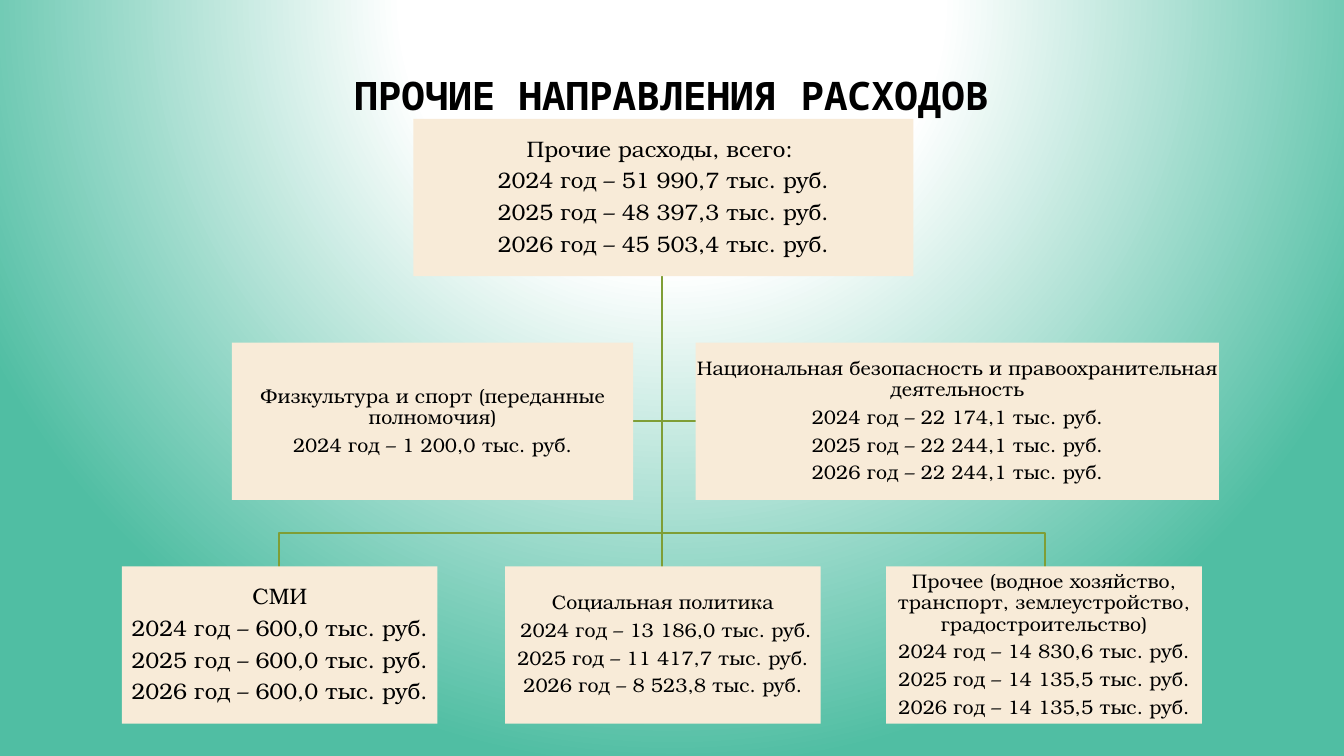
from lxml.etree import fromstring
from pptx import Presentation
from pptx.dml.color import RGBColor
from pptx.enum.shapes import MSO_SHAPE as Shape
from pptx.enum.text import MSO_ANCHOR as Anchor, PP_ALIGN as Align
from pptx.oxml.ns import nsdecls
from pptx.util import Inches, Pt

BLACK = RGBColor(0x00, 0x00, 0x00)
WHITE = RGBColor(0xFF, 0xFF, 0xFF)
TEAL = RGBColor(0x50, 0xBE, 0xA3)
CREAM = RGBColor(0xF8, 0xEB, 0xD8)
OLIVE = RGBColor(0x7F, 0x9E, 0x36)

TRUNK = 6.57
HIGH = 1.56
TOP, MID, LOW = 1.18, 3.4, 5.62
FORK = 5.29


def write(frame, lines, size=14, font="TeX Gyre Bonum", bold=False, inset=0.01, gap=0.33):
    """Fill a text frame with centred lines; gap is a share of the font size."""
    frame.word_wrap = True
    frame.vertical_anchor = Anchor.MIDDLE
    frame.margin_left = frame.margin_right = Inches(inset)
    frame.margin_top = frame.margin_bottom = Inches(inset)
    for i, line in enumerate(lines):
        para = frame.paragraphs[0] if i == 0 else frame.add_paragraph()
        para.alignment = Align.CENTER
        para.line_spacing = 0.9
        para.space_after = Pt(size * gap)
        run = para.add_run()
        run.text = line
        run.font.size = Pt(size)
        run.font.name = font
        run.font.bold = bold
        run.font.color.rgb = BLACK


class Chart:
    def __init__(self, slide):
        self.slide = slide
        self.shapes = slide.shapes

    def glow(self):
        """Set the round gradient that spreads from above the slide."""
        stops = "".join(
            f'<a:gs pos="{pos}"><a:srgbClr val="{color}"/></a:gs>'
            for pos, color in ((0, WHITE), (35000, WHITE), (100000, TEAL)))
        back = fromstring(
            f'<p:bg {nsdecls("p", "a")}><p:bgPr><a:gradFill rotWithShape="1">'
            f'<a:gsLst>{stops}</a:gsLst><a:path path="circle">'
            '<a:fillToRect l="50000" t="-80000" r="50000" b="180000"/></a:path>'
            '</a:gradFill><a:effectLst/></p:bgPr></p:bg>')
        self.slide.element.cSld.insert(0, back)

    def title(self, text):
        box = self.shapes.add_textbox(Inches(1), Inches(0.67), Inches(11.32), Inches(0.6))
        write(box.text_frame, [text], size=28, font="Noto Sans Mono", bold=True, gap=0)

    def link(self, *points):
        """Draw an open line through the points."""
        spots = [(Inches(x), Inches(y)) for x, y in points]
        path = self.shapes.build_freeform(*spots[0])
        path.add_line_segments(spots[1:], close=False)
        line = path.convert_to_shape()
        line.shadow.inherit = False
        line.fill.background()
        line.line.color.rgb = OLIVE
        line.line.width = Pt(1.5)

    def card(self, left, top, width, lines, size):
        box = self.shapes.add_shape(
            Shape.RECTANGLE, Inches(left), Inches(top), Inches(width), Inches(HIGH))
        box.shadow.inherit = False
        box.fill.solid()
        box.fill.fore_color.rgb = CREAM
        box.line.fill.background()
        write(box.text_frame, lines, size=size)


CARDS = [
    (4.1, TOP, 4.96, 16, [
        "Прочие расходы, всего: ",
        "2024 год – 51 990,7 тыс. руб.",
        "2025 год – 48 397,3 тыс. руб.",
        "2026 год – 45 503,4 тыс. руб."]),
    (1.21, LOW, 3.13, 16, [
        "СМИ",
        "2024 год – 600,0 тыс. руб.",
        "2025 год – 600,0 тыс. руб.",
        "2026 год – 600,0 тыс. руб."]),
    (5.01, LOW, 3.13, 14, [
        "Социальная политика",
        " 2024 год – 13 186,0 тыс. руб.",
        "2025 год – 11 417,7 тыс. руб.",
        "2026 год – 8 523,8 тыс. руб."]),
    (8.79, LOW, 3.13, 14, [
        "Прочее (водное хозяйство, транспорт, землеустройство, градостроительство)",
        "2024 год – 14 830,6 тыс. руб.",
        "2025 год – 14 135,5 тыс. руб.",
        "2026 год – 14 135,5 тыс. руб."]),
    (2.3, MID, 3.98, 14, [
        "Физкультура и спорт (переданные полномочия)",
        "2024 год – 1 200,0 тыс. руб."]),
    (6.9, MID, 5.19, 14, [
        "Национальная безопасность и правоохранительная деятельность",
        "2024 год – 22 174,1 тыс. руб.",
        "2025 год – 22 244,1 тыс. руб.",
        "2026 год – 22 244,1 тыс. руб."]),
]


def main():
    deck = Presentation()
    deck.slide_width, deck.slide_height = Inches(13.33), Inches(7.5)
    chart = Chart(deck.slides.add_slide(deck.slide_layouts[6]))
    chart.glow()
    chart.title("ПРОЧИЕ НАПРАВЛЕНИЯ РАСХОДОВ")

    start = (TRUNK, TOP + HIGH)
    side = MID + HIGH / 2
    for edge in (6.9, 6.28):
        chart.link(start, (TRUNK, side), (edge, side))
    chart.link(start, (TRUNK, LOW))
    for mid in (10.36, 2.77):
        chart.link(start, (TRUNK, FORK), (mid, FORK), (mid, LOW))

    for left, top, width, size, lines in CARDS:
        chart.card(left, top, width, lines, size)
    deck.save("out.pptx")


if __name__ == "__main__":
    main()
